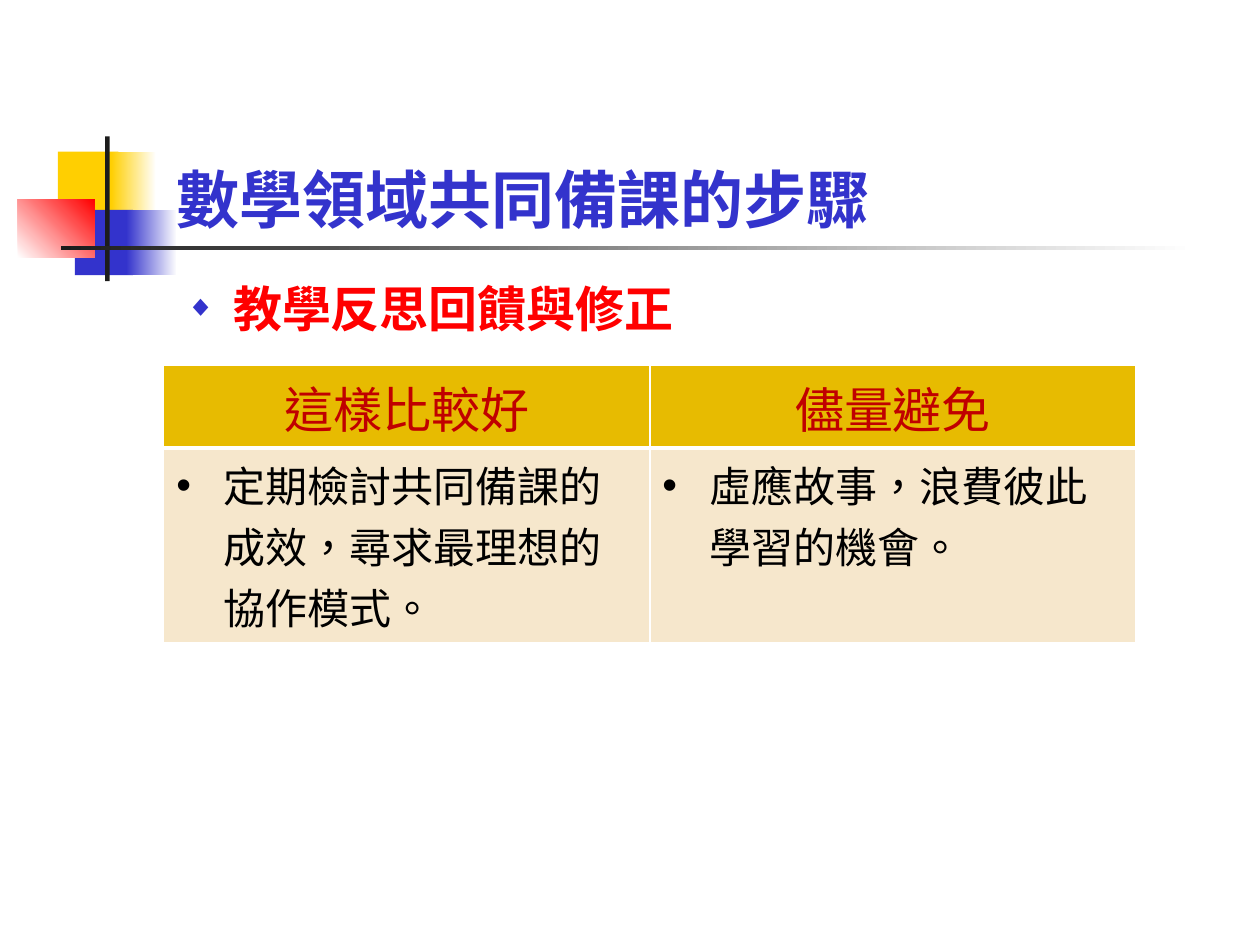
from lxml.etree import SubElement
from pptx import Presentation
from pptx.dml.color import RGBColor
from pptx.enum.lang import MSO_LANGUAGE_ID
from pptx.enum.shapes import MSO_SHAPE
from pptx.enum.text import MSO_ANCHOR, PP_ALIGN
from pptx.oxml.ns import qn
from pptx.util import Cm, Pt

TITLE = "數學領域共同備課的步驟"
SUBTITLE = "教學反思回饋與修正"
TABLE_ROWS = [
    ("這樣比較好", "儘量避免"),
    ("定期檢討共同備課的成效，尋求最理想的協作模式。", "虛應故事，浪費彼此學習的機會。"),
]

THEME = {
    "latin": "Karla", "cjk": "Noto Sans CJK SC",
    "title_size": 36, "heading_size": 28, "body_size": 24,
    "yellow": "FFCF01", "blue": "3333CC", "red": "FF0000", "dark": "1C1C1C",
    "white": "FFFFFF", "black": "000000", "header_text": "C00000",
    "header_fill": "E7BB01", "body_fill": "F6E7CC",
}

# left, top, width, height in cm; colours from start to end; gradient angle
ORNAMENTS = [
    ((1.17, 3.06, 1.22, 1.32), ("yellow",), 0),
    ((2.24, 3.06, 0.91, 1.32), ("yellow", "white"), 0),
    ((1.51, 4.23, 1.17, 1.32), ("blue",), 0),
    ((2.55, 4.23, 1.02, 1.32), ("blue", "white"), 0),
    ((0.36, 4.02, 1.55, 1.18), ("white", "red"), 45),
    ((2.12, 2.75, 0.09, 2.92), ("dark",), 0),
    ((1.23, 4.95, 22.86, 0.09), ("dark", "white"), 0),
]
TITLE_BOX = (3.3, 1.71, 21.54, 3.18)
SUBTITLE_BOX = (3.5, 5.72, 17.81, 1.19)
TABLE_PLACE = (3.3, 7.37, 19.6)
ROW_HEIGHTS = (1.66, 3.92)
BULLET_INDENT = Cm(0.95)


def color(name):
    return RGBColor.from_string(THEME[name])


def box(lengths):
    return [Cm(length) for length in lengths]


def add_ornament(slide, place, colors, angle):
    shape = slide.shapes.add_shape(MSO_SHAPE.RECTANGLE, *box(place))
    shape.shadow.inherit = False
    shape.line.fill.background()
    if len(colors) == 1:
        shape.fill.solid()
        shape.fill.fore_color.rgb = color(colors[0])
        return
    shape.fill.gradient()
    shape.fill.gradient_angle = angle
    for stop, name, position in zip(shape.fill.gradient_stops, colors, (0, 1)):
        stop.color.rgb = color(name)
        stop.position = position


def add_text(paragraph, text, size, color_name, font="latin", bold=False):
    run = paragraph.add_run()
    run.text = text
    run.font.name = THEME[font]
    run.font.size = Pt(THEME[size])
    run.font.bold = bold
    run.font.color.rgb = color(color_name)
    run.font.language_id = MSO_LANGUAGE_ID.TRADITIONAL_CHINESE
    SubElement(run.font._element, qn("a:ea"), typeface=THEME["cjk"])


def add_bullet(paragraph, character, color_name=None, percent=100):
    properties = paragraph._p.get_or_add_pPr()
    properties.set("marL", str(BULLET_INDENT))
    properties.set("indent", str(-BULLET_INDENT))
    if color_name:
        bullet_color = SubElement(properties, qn("a:buClr"))
        SubElement(bullet_color, qn("a:srgbClr"), val=THEME[color_name])
    SubElement(properties, qn("a:buSzPct"), val=str(percent * 1000))
    SubElement(properties, qn("a:buFont"), typeface="Arial")
    SubElement(properties, qn("a:buChar"), char=character)


def add_text_box(slide, place, anchor):
    frame = slide.shapes.add_textbox(*box(place)).text_frame
    frame.word_wrap = True
    frame.vertical_anchor = anchor
    return frame.paragraphs[0]


def set_borders(cell, **widths):
    """Draw white borders; must run before the cell gets its fill."""
    properties = cell._tc.get_or_add_tcPr()
    for side in "LRTB":
        line = SubElement(properties, qn(f"a:ln{side}"), w=str(Pt(widths.get(side, 1))))
        fill = SubElement(line, qn("a:solidFill"))
        SubElement(fill, qn("a:srgbClr"), val=THEME["white"])


def fill_cell(cell, text, is_header):
    paragraph = cell.text_frame.paragraphs[0]
    if is_header:
        set_borders(cell, B=3)
        cell.vertical_anchor = MSO_ANCHOR.MIDDLE
        paragraph.alignment = PP_ALIGN.CENTER
        add_text(paragraph, text, "heading_size", "header_text")
    else:
        set_borders(cell, T=3)
        add_bullet(paragraph, "•")
        add_text(paragraph, text, "body_size", "black")
    cell.fill.solid()
    cell.fill.fore_color.rgb = color("header_fill" if is_header else "body_fill")


def add_comparison_table(slide):
    place = box((*TABLE_PLACE, sum(ROW_HEIGHTS)))
    table = slide.shapes.add_table(len(TABLE_ROWS), len(TABLE_ROWS[0]), *place).table
    table.first_row = table.horz_banding = False
    for row_index, (texts, height) in enumerate(zip(TABLE_ROWS, ROW_HEIGHTS)):
        table.rows[row_index].height = Cm(height)
        for column_index, text in enumerate(texts):
            fill_cell(table.cell(row_index, column_index), text, row_index == 0)


def main():
    presentation = Presentation()
    presentation.slide_width, presentation.slide_height = Cm(25.4), Cm(19.05)
    slide = presentation.slides.add_slide(presentation.slide_layouts[6])

    for place, colors, angle in ORNAMENTS:
        add_ornament(slide, place, colors, angle)

    title = add_text_box(slide, TITLE_BOX, MSO_ANCHOR.BOTTOM)
    add_text(title, TITLE, "title_size", "blue", bold=True)

    subtitle = add_text_box(slide, SUBTITLE_BOX, MSO_ANCHOR.TOP)
    subtitle.line_spacing = 0.8
    add_bullet(subtitle, "◆", "blue", 60)
    add_text(subtitle, SUBTITLE, "heading_size", "red", font="cjk", bold=True)

    add_comparison_table(slide)
    presentation.save("out.pptx")


if __name__ == "__main__":
    main()
